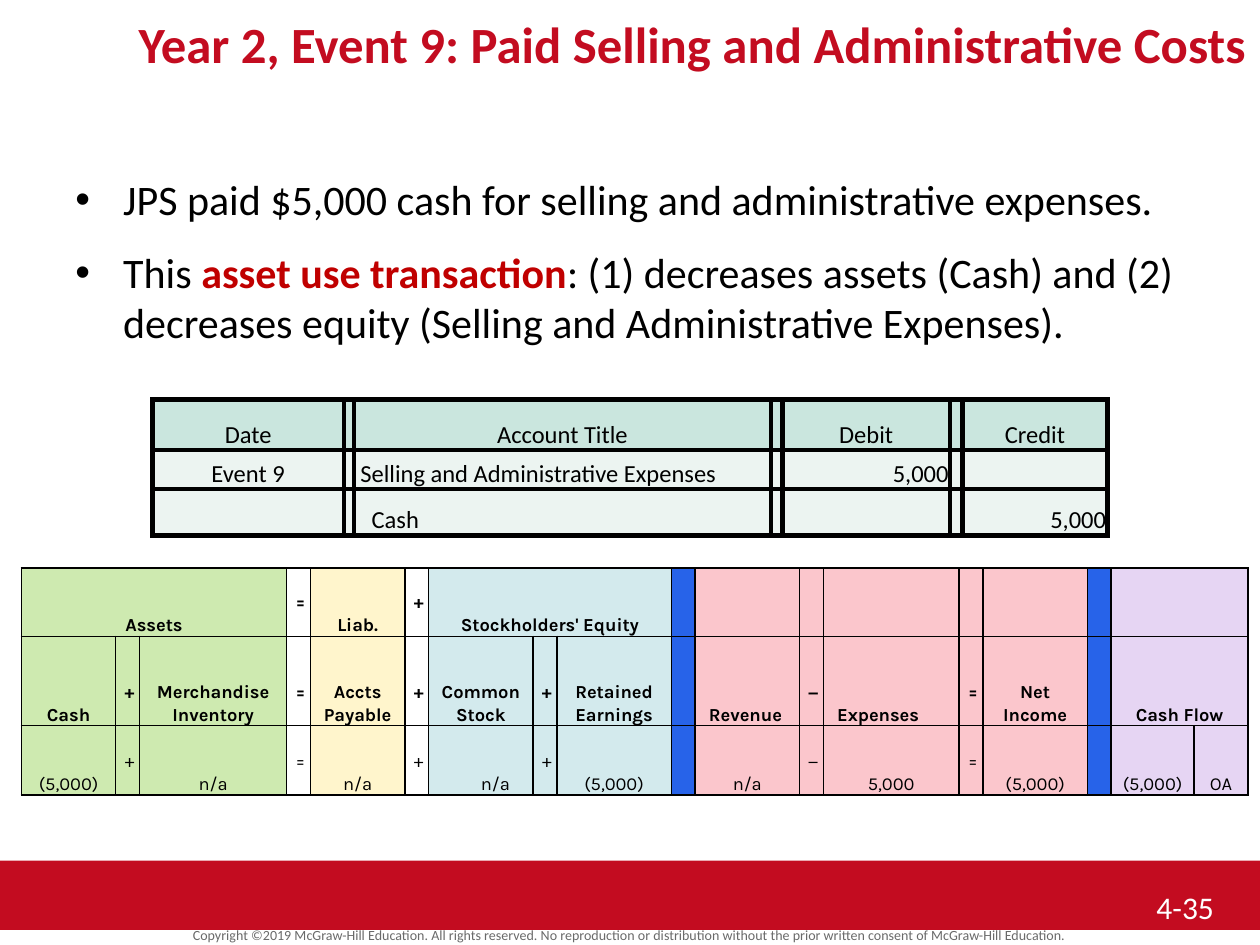
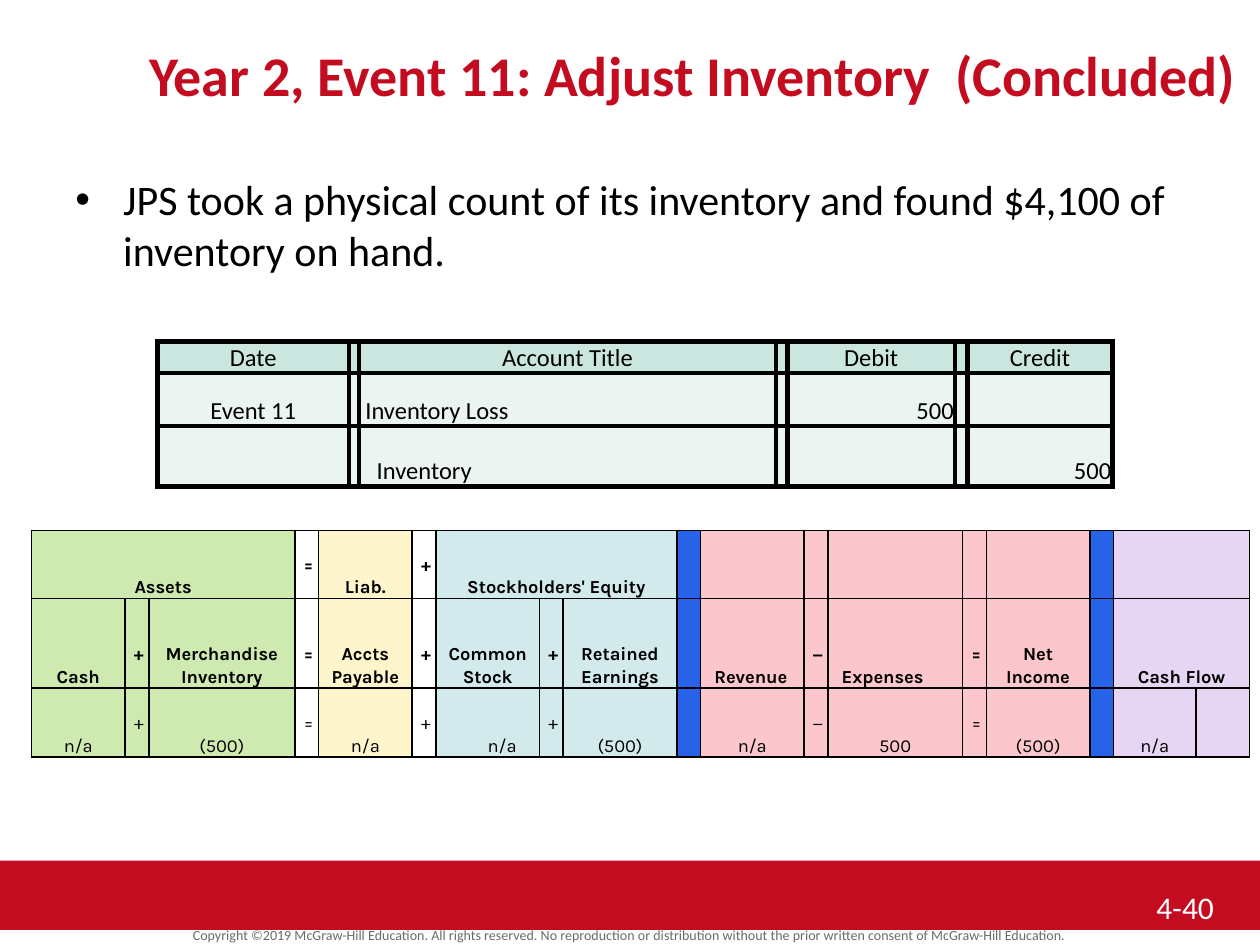
from pptx import Presentation
from pptx import util as u
from pptx.dml.color import RGBColor
from pptx.enum import shapes, text
from pptx.oxml import parse_xml
from pptx.oxml.ns import nsdecls

CRIMSON = RGBColor(0xC3, 0x0C, 0x20)
EMPHASIS = RGBColor(0xC0, 0x00, 0x00)
BLACK = RGBColor(0, 0, 0)
WHITE = RGBColor(0xFF, 0xFF, 0xFF)
GREY = RGBColor(0x6A, 0x6A, 0x6A)
HEADER_MINT = RGBColor(0xCA, 0xE6, 0xDE)
ROW_MINT = RGBColor(0xEC, 0xF4, 0xF1)
GREEN = RGBColor(0xCE, 0xEA, 0xB0)
YELLOW = RGBColor(0xFF, 0xF5, 0xCC)
TEAL = RGBColor(0xD3, 0xEA, 0xED)
BLUE = RGBColor(0x27, 0x63, 0xE9)
PINK = RGBColor(0xFB, 0xC6, 0xCC)
LILAC = RGBColor(0xE6, 0xD5, 0xF3)

LEFT, CENTER, RIGHT = text.PP_ALIGN.LEFT, text.PP_ALIGN.CENTER, text.PP_ALIGN.RIGHT
TOP, MIDDLE, BOTTOM = text.MSO_ANCHOR.TOP, text.MSO_ANCHOR.MIDDLE, text.MSO_ANCHOR.BOTTOM

COPYRIGHT = ("Copyright ©2019 McGraw-Hill Education. All rights reserved. No reproduction or "
             "distribution without the prior written consent of McGraw-Hill Education.")

EVENTS = [
    {
        "title": "Year 2, Event 9: Paid Selling and Administrative Costs",
        "title_top": 0.01, "title_size": 29, "number": "4-35",
        "bullets": [
            [("JPS paid $5,000 cash for selling and administrative expenses.", False)],
            [("This ", False), ("asset use transaction", True),
             (": (1) decreases assets (Cash) and (2) decreases equity "
              "(Selling and Administrative Expenses).", False)],
        ],
        "journal": [("Event 9", "Selling and Administrative Expenses", "5,000", ""),
                    ("", "Cash", "", "5,000")],
        "journal_at": (1.21, 3.17), "journal_rows": (0.4, 0.31, 0.37),
        "effects": ["(5,000)", "n/a", "n/a", "n/a", "(5,000)",
                    "n/a", "5,000", "(5,000)", "(5,000)", "OA"],
        "equation_at": (0.17, 4.51), "equation_width": 9.74,
    },
    {
        "title": "Year 2, Event 11: Adjust Inventory  (Concluded)",
        "title_top": 0.25, "title_size": 32, "number": "4-40",
        "bullets": [
            [("JPS took a physical count of its inventory and found $4,100 of inventory on hand.",
              False)],
        ],
        "journal": [("Event 11", "Inventory Loss", "500", ""),
                    ("", "Inventory", "", "500")],
        "journal_at": (1.25, 2.71), "journal_rows": (0.25, 0.42, 0.48),
        "effects": ["n/a", "(500)", "n/a", "n/a", "(500)",
                    "n/a", "500", "(500)", "n/a", ""],
        "equation_at": (0.25, 4.21), "equation_width": 9.67,
    },
]

JOURNAL_HEADS = ("Date", "Account Title", "Debit", "Credit")
JOURNAL_COLUMNS = (1.52, 0.08, 3.31, 0.09, 1.33, 0.1, 1.15)
JOURNAL_ALIGN = (CENTER, LEFT, LEFT, LEFT, RIGHT, LEFT, RIGHT)

GAP = 0.19
EQUATION_COLUMNS = [
    (0.75, GREEN, "Cash"), (GAP, GREEN, "+"), (1.17, GREEN, "Merchandise\nInventory"),
    (GAP, None, "="), (0.75, YELLOW, "Accts Payable"), (GAP, None, "+"),
    (0.83, TEAL, "Common Stock"), (GAP, TEAL, "+"), (0.91, TEAL, "Retained Earnings"),
    (GAP, BLUE, ""), (0.83, PINK, "Revenue"), (GAP, PINK, "−"), (1.08, PINK, "Expenses"),
    (GAP, PINK, "="), (0.83, PINK, "Net Income"), (GAP, BLUE, ""),
    (0.66, LILAC, "Cash Flow"), (0.43, LILAC, ""),
]
EQUATION_ROWS = (0.54, 0.71, 0.55)
GROUP_HEADS = {0: "Assets", 3: "=", 4: "Liab.", 5: "+", 6: "Stockholders' Equity"}
EQUATION_SPANS = [(0, 0, 2), (0, 6, 8), (0, 16, 17), (1, 16, 17)]
COMMON_STOCK = 6
OPERATORS = ("+", "=", "−")


def apply(target, **formats):
    for name, value in formats.items():
        setattr(target, name, value)


def set_margins(target, left, top, right, bottom):
    apply(target, margin_left=u.Inches(left), margin_top=u.Inches(top),
          margin_right=u.Inches(right), margin_bottom=u.Inches(bottom))


def add_run(paragraph, words, size, color, bold=False, face="Calibri"):
    run = paragraph.add_run()
    run.text = words
    apply(run.font, size=u.Pt(size), bold=bold, name=face)
    run.font.color.rgb = color


def add_box(slide, left, top, width, height, anchor=TOP, margins=(0.1, 0.05, 0.1, 0.05)):
    frame = slide.shapes.add_textbox(*map(u.Inches, (left, top, width, height))).text_frame
    apply(frame, word_wrap=True, vertical_anchor=anchor)
    set_margins(frame, *margins)
    return frame


def add_frame(slide, event):
    band = slide.shapes.add_shape(shapes.MSO_SHAPE.RECTANGLE,
                                  *map(u.Inches, (0, 6.83, 10, 0.55)))
    band.shadow.inherit = False
    band.fill.solid()
    band.fill.fore_color.rgb = CRIMSON
    band.line.fill.background()

    notice = add_box(slide, 0, 7.34, 10, 0.19, MIDDLE, (0, 0, 0, 0)).paragraphs[0]
    apply(notice, alignment=CENTER, line_spacing=0.8)
    add_run(notice, COPYRIGHT, 8, GREY)

    title = add_box(slide, 1, event["title_top"], 9, 0.67, MIDDLE, (0, 0, 0, 0)).paragraphs[0]
    title.alignment = CENTER
    add_run(title, event["title"], event["title_size"], CRIMSON, True)

    number = add_box(slide, 9.08, 7, 0.92, 0.42).paragraphs[0]
    add_run(number, event["number"], 18, WHITE)


def add_bullets(slide, bullets):
    frame = add_box(slide, 0.5, 1.33, 9, 5.17)
    for index, runs in enumerate(bullets):
        paragraph = frame.add_paragraph() if index else frame.paragraphs[0]
        properties = paragraph._p.get_or_add_pPr()
        properties.set("marL", str(u.Inches(0.38)))
        properties.set("indent", str(-u.Inches(0.38)))
        properties.append(parse_xml(f'<a:buFont {nsdecls("a")} typeface="Arial"/>'))
        properties.append(parse_xml(f'<a:buChar {nsdecls("a")} char="•"/>'))
        apply(paragraph, space_before=u.Pt(4.8 if index else 0), space_after=u.Pt(8))
        for words, strong in runs:
            add_run(paragraph, words, 24, EMPHASIS if strong else BLACK, strong)


def add_grid(slide, at, widths, heights):
    size = (sum(widths), sum(heights))
    table = slide.shapes.add_table(len(heights), len(widths),
                                   *map(u.Inches, at + size)).table
    apply(table, first_row=False, horz_banding=False)
    for column, width in zip(table.columns, widths):
        column.width = u.Inches(width)
    for row, height in zip(table.rows, heights):
        row.height = u.Inches(height)
    return table


def fill_cell(cell, words, fill, border, margins, align, size, face, bold=False, spacing=1):
    cell.vertical_anchor = BOTTOM
    set_margins(cell, *margins)
    for index, line in enumerate(words.split("\n")):
        frame = cell.text_frame
        paragraph = frame.add_paragraph() if index else frame.paragraphs[0]
        apply(paragraph, alignment=align, line_spacing=spacing)
        if line:
            add_run(paragraph, line, size, BLACK, bold, face)
        else:
            paragraph._p.get_or_add_endParaRPr().set("sz", str(int(size * 100)))
    properties = cell._tc.get_or_add_tcPr()
    for side in ("lnL", "lnR", "lnT", "lnB"):
        properties.append(parse_xml(
            f'<a:{side} {nsdecls("a")} w="{u.Pt(border)}"><a:solidFill>'
            f'<a:srgbClr val="{BLACK}"/></a:solidFill></a:{side}>'))
    if fill is None:
        cell.fill.background()
    else:
        cell.fill.solid()
        cell.fill.fore_color.rgb = fill


def add_journal(slide, event):
    table = add_grid(slide, event["journal_at"], JOURNAL_COLUMNS, event["journal_rows"])
    for row, entry in enumerate([JOURNAL_HEADS] + event["journal"]):
        for column in range(len(JOURNAL_COLUMNS)):
            words = "" if column % 2 else entry[column // 2]
            indent = (0.01, 0.05, 0.14)[row] if column == 2 else 0.01
            fill_cell(table.cell(row, column), words, ROW_MINT if row else HEADER_MINT, 3,
                      (indent, 0.01, 0.01, 0), JOURNAL_ALIGN[column] if row else CENTER,
                      14, "Calibri")


def add_equation(slide, event):
    scale = event["equation_width"] / sum(width for width, _, _ in EQUATION_COLUMNS)
    widths = [width * scale for width, _, _ in EQUATION_COLUMNS]
    table = add_grid(slide, event["equation_at"], widths, EQUATION_ROWS)
    effects = iter(event["effects"])
    heads = [head for _, _, head in EQUATION_COLUMNS]
    entries = [
        [GROUP_HEADS.get(column, "") for column in range(len(heads))],
        heads,
        [head if width == GAP else next(effects) for width, _, head in EQUATION_COLUMNS],
    ]
    for row, entry in enumerate(entries):
        for column, words in enumerate(entry):
            margins, align = (0.07, 0, 0.07, 0), CENTER
            if words in OPERATORS:
                margins = (0.03, 0, 0, 0.18)
            elif words in ("Revenue", "Expenses"):
                margins, align = (0.11, 0, 0, 0), LEFT
            elif row == 2 and column == COMMON_STOCK:
                margins = (0.3, 0, 0.07, 0)
            fill_cell(table.cell(row, column), words, EQUATION_COLUMNS[column][1], 1,
                      margins, align, 10.5, "Karla", row < 2, 1.07)
    for row, first, last in EQUATION_SPANS:
        table.cell(row, first).merge(table.cell(row, last))


def main():
    deck = Presentation()
    apply(deck, slide_width=u.Inches(10), slide_height=u.Inches(7.5))
    for event in EVENTS:
        slide = deck.slides.add_slide(deck.slide_layouts[6])
        add_frame(slide, event)
        add_bullets(slide, event["bullets"])
        add_journal(slide, event)
        add_equation(slide, event)
    deck.save("out.pptx")


if __name__ == "__main__":
    main()
